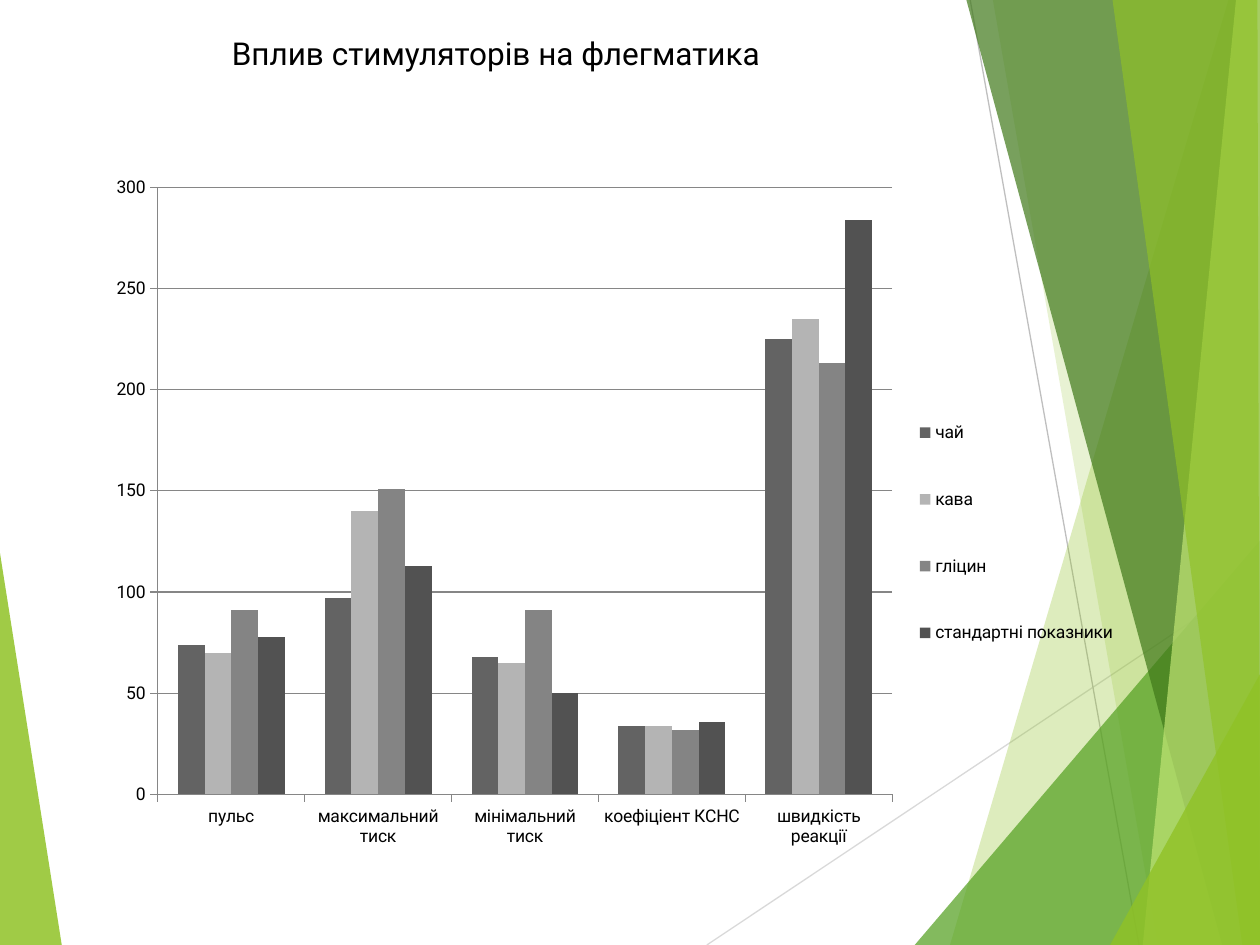
import pptx
import pptx.chart.data
import pptx.dml.color
import pptx.enum.chart
import pptx.enum.text
import pptx.oxml
import pptx.oxml.ns
import pptx.util
from dataclasses import dataclass

Inches = pptx.util.Inches
qn = pptx.oxml.ns.qn


@dataclass(frozen=True)
class Theme:
    font: str = "Roboto"
    ink: str = "000000"
    lime: str = "90C226"
    green: str = "54A021"
    dark: str = "3F7819"
    pale: str = "C0E474"
    rule: str = "D9D9D9"
    edge: str = "BFBFBF"
    axis: str = "868686"
    bars: tuple = ("636363", "B4B4B4", "848484", "525252")
    head: int = 18
    body: int = 10


THEME = Theme()

# Ribbons: colour, opacity in percent, corner points in inches
LEFT = (THEME.lime, 85, [(0, 4.39), (0.49, 7.5), (0, 7.5)])
RIGHT = [
    (THEME.lime, 30, [(9.75, 0), (10, 0), (10, 7.5), (7.54, 7.5)]),
    (THEME.lime, 20, [(7.88, 0), (10, 0), (10, 7.5), (9.19, 7.5)]),
    (THEME.green, 72, [(7.26, 7.5), (10, 4.29), (10, 7.5)]),
    (THEME.dark, 70, [(7.67, 0), (10, 0), (10, 7.5), (9.7, 7.5)]),
    (THEME.pale, 70, [(9.81, 0), (10, 0), (10, 7.5), (9.07, 7.5)]),
    (THEME.lime, 65, [(8.83, 0), (9.98, 0), (10, 7.5), (9.86, 7.5)]),
    (THEME.lime, 80, [(8.81, 7.5), (10, 5.35), (10, 7.5)]),
]
RULES = [
    (THEME.rule, (5.61, 7.5), (10, 4.57)),
    (THEME.edge, (7.7, 0), (9.04, 7.5)),
]

CATS = ["пульс", "максимальний тиск", "мінімальний тиск",
        "коефіціент КСНС", "швидкість реакції"]
SERIES = {
    "чай": (74, 97, 68, 34, 225),
    "кава": (70, 140, 65, 34, 235),
    "гліцин": (91, 151, 91, 32, 213),
    "стандартні показники": (78, 113, 50, 36, 284),
}


def rgb(code):
    return pptx.dml.color.RGBColor.from_string(code)


def style(font, size):
    font.name = THEME.font
    font.size = pptx.util.Pt(size)
    font.bold = False
    font.color.rgb = rgb(THEME.ink)


def ribbon(slide, box, color, alpha, points):
    left, top = box[:2]
    spots = [(left + Inches(x), top + Inches(y)) for x, y in points]
    pen = slide.shapes.build_freeform(*spots[0])
    pen.add_line_segments(spots[1:], close=True)
    shape = pen.convert_to_shape()
    shape.shadow.inherit = False
    shape.line.fill.background()
    shape.fill.solid()
    shape.fill.fore_color.rgb = rgb(color)
    tint = shape.fill._xPr.find(".//" + qn("a:srgbClr"))
    pptx.oxml.ns  # namespace helpers serve the opacity element below
    mark = tint.makeelement(qn("a:alpha"), {"val": str(alpha * 1000)})
    tint.append(mark)


def rule(slide, box, color, start, end):
    left, top = box[:2]
    line = slide.shapes.add_connector(
        pptx.enum.shapes.MSO_CONNECTOR.STRAIGHT,
        left + Inches(start[0]), top + Inches(start[1]),
        left + Inches(end[0]), top + Inches(end[1]))
    line.line.color.rgb = rgb(color)
    line.line.width = pptx.util.Pt(0.75)
    props = line._element.spPr
    props.append(props.makeelement(qn("a:effectLst"), {}))


def decor(slide, box):
    ribbon(slide, box, *LEFT)
    for item in RULES:
        rule(slide, box, *item)
    for item in RIGHT:
        ribbon(slide, box, *item)


def title(slide, box):
    head = slide.shapes.title
    head.left, head.top, head.width, head.height = box
    frame = head.text_frame
    frame.text = "Вплив стимуляторів на флегматика"
    frame.word_wrap = True
    frame.vertical_anchor = pptx.enum.text.MSO_ANCHOR.TOP
    para = frame.paragraphs[0]
    para.alignment = pptx.enum.text.PP_ALIGN.LEFT
    para.line_spacing = 1.0
    style(para.runs[0].font, THEME.head)


def layout(part, index, x, y, w, h, inner=False):
    """Fix a chart part at fractions of the chart's box."""
    for old in part.findall(qn("c:layout")):
        part.remove(old)
    node = part.makeelement(qn("c:layout"), {})
    part.insert(index, node)
    manual = node.makeelement(qn("c:manualLayout"), {})
    node.append(manual)
    pairs = [("layoutTarget", "inner")] if inner else []
    pairs += [("xMode", "edge"), ("yMode", "edge"),
              ("x", x), ("y", y), ("w", w), ("h", h)]
    for tag, val in pairs:
        manual.append(manual.makeelement(qn("c:" + tag), {"val": str(val)}))


def graph(slide, box):
    data = pptx.chart.data.CategoryChartData()
    data.categories = CATS
    for name, vals in SERIES.items():
        data.add_series(name, vals)
    kind = pptx.enum.chart.XL_CHART_TYPE.COLUMN_CLUSTERED
    chart = slide.shapes.add_chart(kind, *box, data).chart
    chart.has_title = False
    style(chart.font, THEME.body)

    # Columns
    plot = chart.plots[0]
    plot.gap_width = 150
    plot.overlap = 0
    plot.vary_by_categories = False
    for series, color in zip(plot.series, THEME.bars):
        series.format.fill.solid()
        series.format.fill.fore_color.rgb = rgb(color)

    # Axes and grid
    scale = chart.value_axis
    scale.minimum_scale, scale.maximum_scale = 0, 300
    scale.major_unit = 50
    scale.has_major_gridlines = True
    for part in (scale, chart.category_axis, scale.major_gridlines):
        part.format.line.color.rgb = rgb(THEME.axis)
        part.format.line.width = pptx.util.Pt(0.75)
    for axis in (scale, chart.category_axis):
        axis.major_tick_mark = pptx.enum.chart.XL_TICK_MARK.OUTSIDE

    # Legend and inner plot frame
    chart.has_legend = True
    legend = chart.legend
    legend.position = pptx.enum.chart.XL_LEGEND_POSITION.RIGHT
    legend.include_in_layout = False
    layout(legend._element, 1, 0.79, 0.3, 0.2, 0.45)
    area = chart._chartSpace.find(".//" + qn("c:plotArea"))
    layout(area, 0, 0.06, 0.03, 0.71, 0.87, inner=True)


def main():
    deck = pptx.Presentation()
    deck.slide_width, deck.slide_height = Inches(10), Inches(7.5)
    slide = deck.slides.add_slide(deck.slide_layouts[5])
    decor(slide, (0, 0, deck.slide_width, deck.slide_height))
    title(slide, (Inches(1.74), Inches(0.22), Inches(5.66), Inches(0.4)))
    graph(slide, (Inches(0.76), Inches(1.32), Inches(8.21), Inches(5.54)))
    deck.save("out.pptx")


if __name__ == "__main__":
    main()
